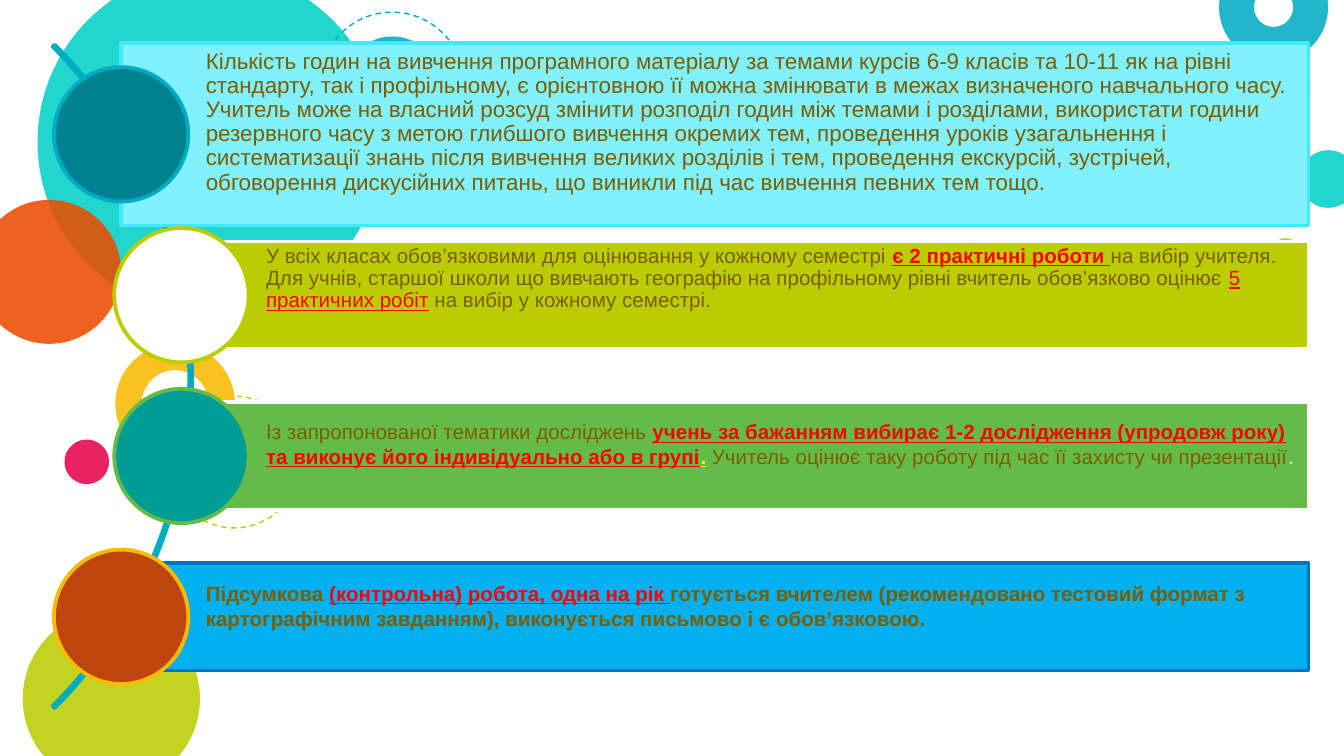
from dataclasses import dataclass
from typing import Optional

from lxml.etree import SubElement
from pptx import Presentation
from pptx.dml.color import RGBColor
from pptx.enum.dml import MSO_LINE
from pptx.enum.shapes import MSO_SHAPE
from pptx.enum.text import MSO_ANCHOR, PP_ALIGN
from pptx.oxml.ns import qn
from pptx.util import Cm, Pt

WHITE = RGBColor(0xFF, 0xFF, 0xFF)
BROWN = RGBColor(0x7C, 0x5E, 0x00)
RED = RGBColor(0xFF, 0x00, 0x00)
YELLOW = RGBColor(0xFF, 0xFF, 0x00)
CYAN = RGBColor(0x00, 0xAC, 0xC3)
TEAL = RGBColor(0x00, 0xD1, 0xC6)
LIME = RGBColor(0xBB, 0xCD, 0x00)
GOLD = RGBColor(0xF8, 0xBB, 0x00)
ORANGE = RGBColor(0xED, 0x4A, 0x00)
PINK = RGBColor(0xE8, 0x00, 0x4C)
GREEN = RGBColor(0x65, 0xBB, 0x48)
ICE = RGBColor(0x81, 0xF0, 0xFF)
AQUA = RGBColor(0x42, 0xE9, 0xFF)
SKY = RGBColor(0x00, 0xB0, 0xF0)
BLUE = RGBColor(0x00, 0x70, 0xC0)
DEEP = RGBColor(0x00, 0x81, 0x92)
SEA = RGBColor(0x00, 0x9D, 0x94)
RUST = RGBColor(0xBF, 0x45, 0x0E)

RIGHT, FIRST, PITCH, DISC = 24.73, 2.54, 3.04, 2.54


@dataclass
class Bubble:
    left: float
    top: float
    size: float
    color: RGBColor
    ring: Optional[float] = None
    dashed: bool = False


@dataclass
class Phrase:
    text: str
    color: RGBColor = BROWN
    bold: bool = False
    under: bool = False


@dataclass
class Panel:
    left: float
    height: float
    fill: RGBColor
    edge: RGBColor
    disc: RGBColor
    rim: RGBColor
    size: int
    foot: float
    tight: float
    phrases: list[Phrase]


BUBBLES = [
    Bubble(3.18, 7.49, 2.49, LIME, dashed=True),
    Bubble(0.71, -0.58, 6.53, TEAL, ring=0.3),
    Bubble(-0.43, 3.78, 2.72, ORANGE),
    Bubble(6.5, 0.69, 1.83, CYAN),
    Bubble(2.18, 6.5, 2.26, GOLD, ring=0.22),
    Bubble(0.43, 11.53, 3.35, LIME),
    Bubble(1.22, 8.31, 0.84, PINK),
    Bubble(24.56, 2.84, 1.09, TEAL),
    Bubble(23.04, -0.89, 2.06, CYAN, ring=0.32),
    Bubble(24.03, 4.5, 0.53, LIME),
    Bubble(6.05, 0.23, 2.72, CYAN, dashed=True),
]

PANELS = [
    Panel(2.29, 3.45, ICE, AQUA, DEEP, CYAN, 12, 0.53, 0.9, [
        Phrase("Кількість годин на вивчення програмного матеріалу за темами курсів 6-9 класів "
               "та 10-11 як на рівні стандарту, так і профільному, є орієнтовною її можна "
               "змінювати в межах визначеного навчального часу. Учитель може на власний розсуд "
               "змінити розподіл годин між темами і розділами, використати години резервного "
               "часу з метою глибшого вивчення окремих тем, проведення уроків узагальнення і "
               "систематизації знань після вивчення великих розділів і тем, проведення "
               "екскурсій, зустрічей, обговорення дискусійних питань, що виникли під час "
               "вивчення певних тем тощо."),
    ]),
    Panel(3.43, 2.03, LIME, WHITE, WHITE, LIME, 11, 0.69, 0.9, [
        Phrase("У всіх класах обов’язковими для оцінювання у кожному семестрі "),
        Phrase("є 2 практичні роботи ", RED, True, True),
        Phrase("на вибір учителя. Для учнів, старшої школи що вивчають географію на "
               "профільному рівні вчитель обов’язково оцінює "),
        Phrase("5", RED, under=True),
        Phrase(" ", YELLOW, under=True),
        Phrase("практичних робіт", RED, under=True),
        Phrase(" на вибір у кожному семестрі."),
    ]),
    Panel(3.43, 2.03, GREEN, WHITE, SEA, GREEN, 11, 0.53, 1.0, [
        Phrase("Із запропонованої тематики досліджень "),
        Phrase("учень за бажанням вибирає 1-2 дослідження (упродовж року) та виконує його "
               "індивідуально або в групі", RED, True, True),
        Phrase(".", YELLOW, True, True),
        Phrase(" Учитель оцінює таку роботу під час її захисту чи презентації"),
        Phrase(".", WHITE),
    ]),
    Panel(2.29, 2.03, SKY, BLUE, RUST, GOLD, 11, 0.5, 1.0, [
        Phrase("Підсумкова ", bold=True),
        Phrase("(контрольна) робота, одна на рік ", RED, True, True),
        Phrase("готується вчителем (рекомендовано тестовий формат з картографічним "
               "завданням), виконується письмово і є обов’язковою.", bold=True),
    ]),
]


def draw(slide, kind: MSO_SHAPE, left: float, top: float, width: float, height: float,
         fill: Optional[RGBColor], line: Optional[RGBColor], weight: float = 2):
    shape = slide.shapes.add_shape(kind, Cm(left), Cm(top), Cm(width), Cm(height))
    shape.shadow.inherit = False
    if fill is None:
        shape.fill.background()
    else:
        shape.fill.solid()
        shape.fill.fore_color.rgb = fill
    if line is None:
        shape.line.fill.background()
    else:
        shape.line.color.rgb = line
        shape.line.width = Pt(weight)
    return shape


def add_bubble(slide, item: Bubble) -> None:
    kind = MSO_SHAPE.OVAL if item.ring is None else MSO_SHAPE.DONUT
    fill, line = (None, item.color) if item.dashed else (item.color, None)
    shape = draw(slide, kind, item.left, item.top, item.size, item.size, fill, line, 0.75)
    if item.ring is not None:
        shape.adjustments[0] = item.ring
    if item.dashed:
        shape.line.dash_style = MSO_LINE.DASH
    else:
        tint = shape._element.spPr.find(qn("a:solidFill"))[0]
        SubElement(tint, qn("a:alpha")).set("val", "87000")


def add_arc(slide) -> None:
    arc = draw(slide, MSO_SHAPE.BLOCK_ARC, -14.1, -1.75, 17.73, 17.73, None, CYAN)
    for index, value in enumerate((189, 27, 0.003)):
        arc.adjustments[index] = value


def write(shape, item: Panel) -> None:
    frame = shape.text_frame
    frame.word_wrap = True
    frame.vertical_anchor = MSO_ANCHOR.MIDDLE
    frame.margin_left = Cm(1.6)
    frame.margin_top = frame.margin_right = Cm(0.08)
    frame.margin_bottom = Cm(item.foot)
    para = frame.paragraphs[0]
    para.alignment = PP_ALIGN.LEFT
    para.line_spacing = item.tight
    for phrase in item.phrases:
        run = para.add_run()
        run.text = phrase.text
        font = run.font
        font.name, font.size = "Arial", Pt(item.size)
        font.bold, font.underline = phrase.bold, phrase.under
        font.color.rgb = phrase.color


def add_panel(slide, item: Panel, mid: float) -> None:
    """Draw a text bar with a disc centred on its left edge."""
    bar = draw(slide, MSO_SHAPE.RECTANGLE, item.left, mid - item.height / 2,
               RIGHT - item.left, item.height, item.fill, item.edge)
    write(bar, item)
    draw(slide, MSO_SHAPE.OVAL, item.left - DISC / 2, mid - DISC / 2, DISC, DISC,
         item.disc, item.rim)


def main() -> None:
    deck = Presentation()
    deck.slide_width, deck.slide_height = Cm(25.4), Cm(14.29)
    slide = deck.slides.add_slide(deck.slide_layouts[6])
    for item in BUBBLES:
        add_bubble(slide, item)
    add_arc(slide)
    for row, item in enumerate(PANELS):
        add_panel(slide, item, FIRST + row * PITCH)
    deck.save("out.pptx")


if __name__ == "__main__":
    main()
